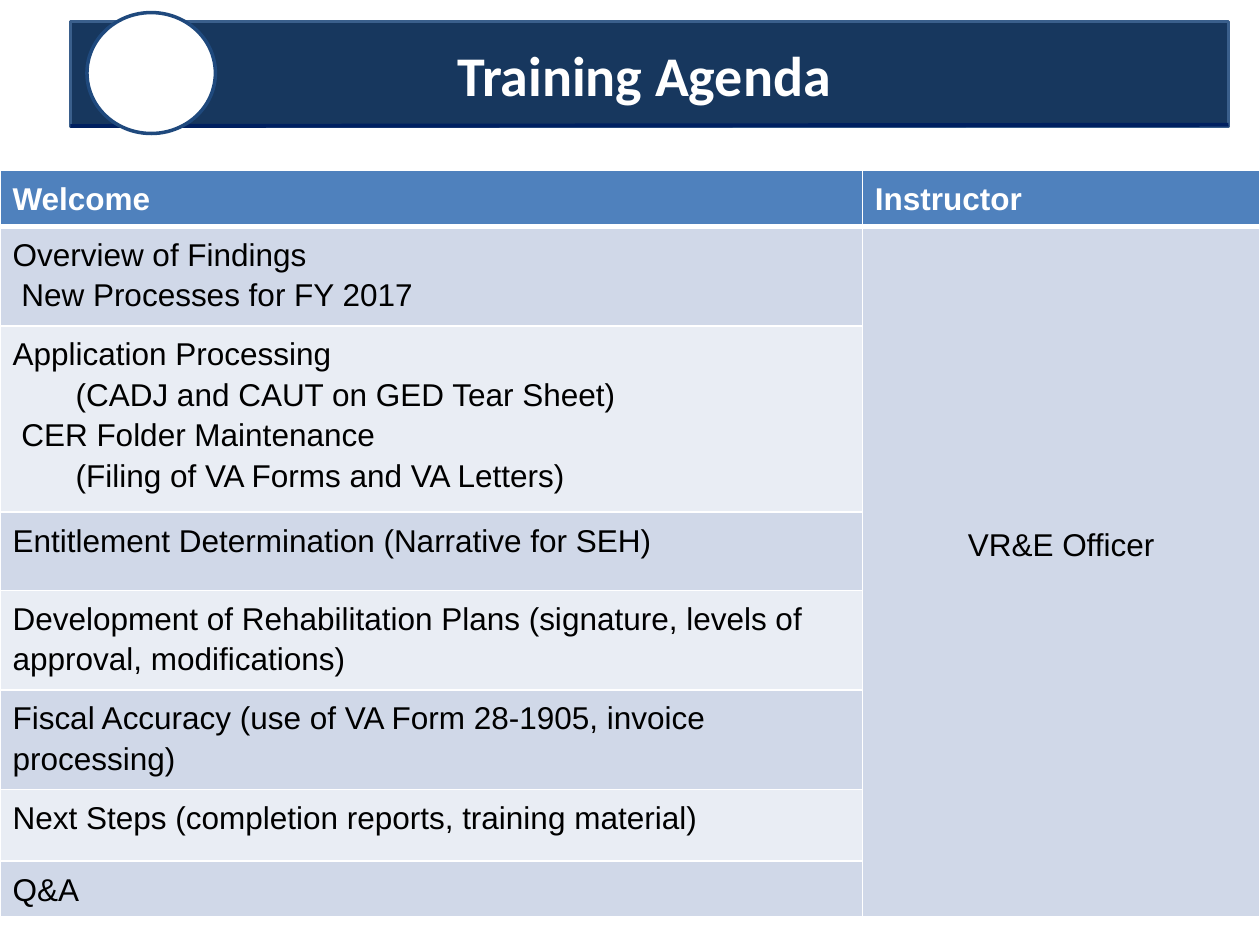
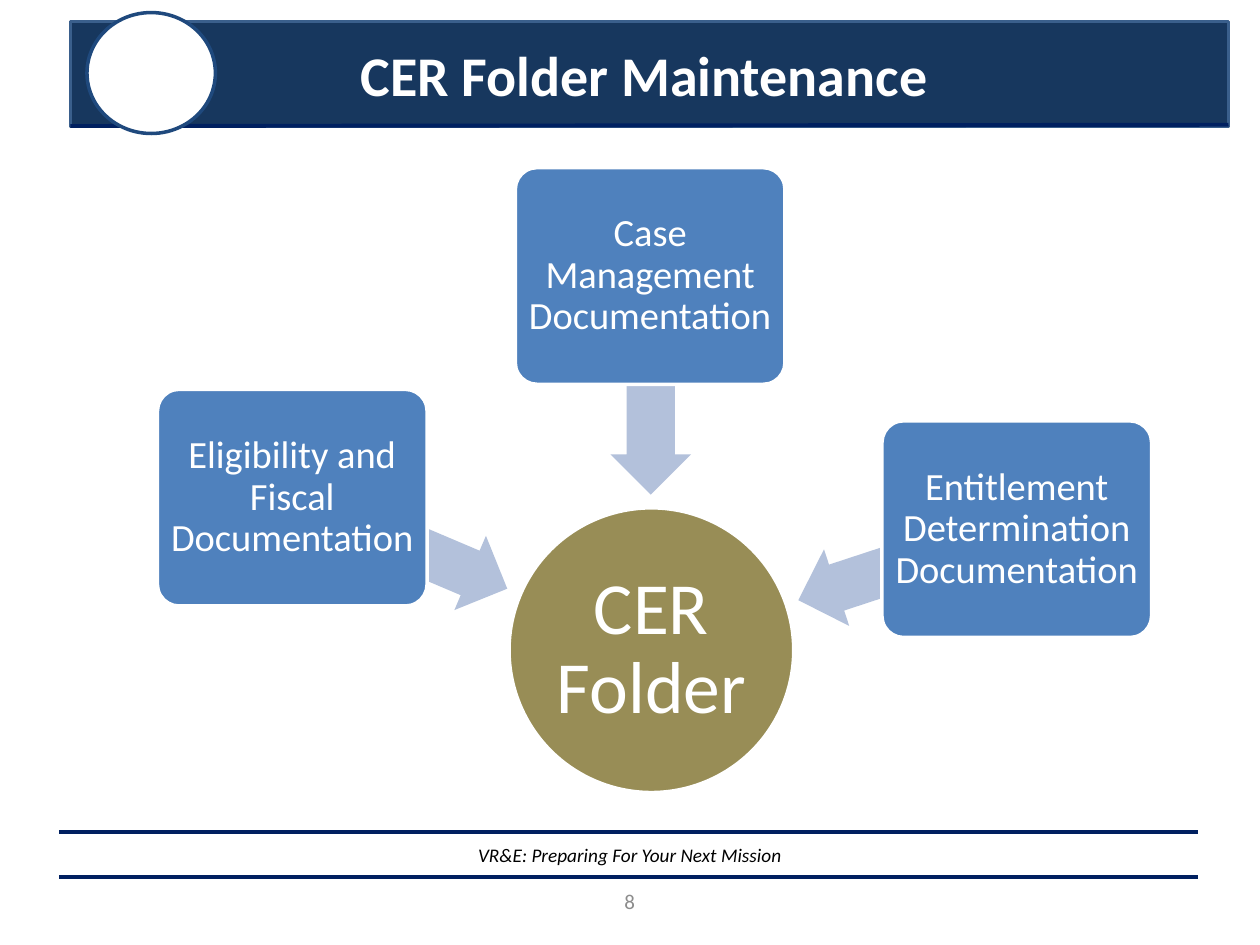
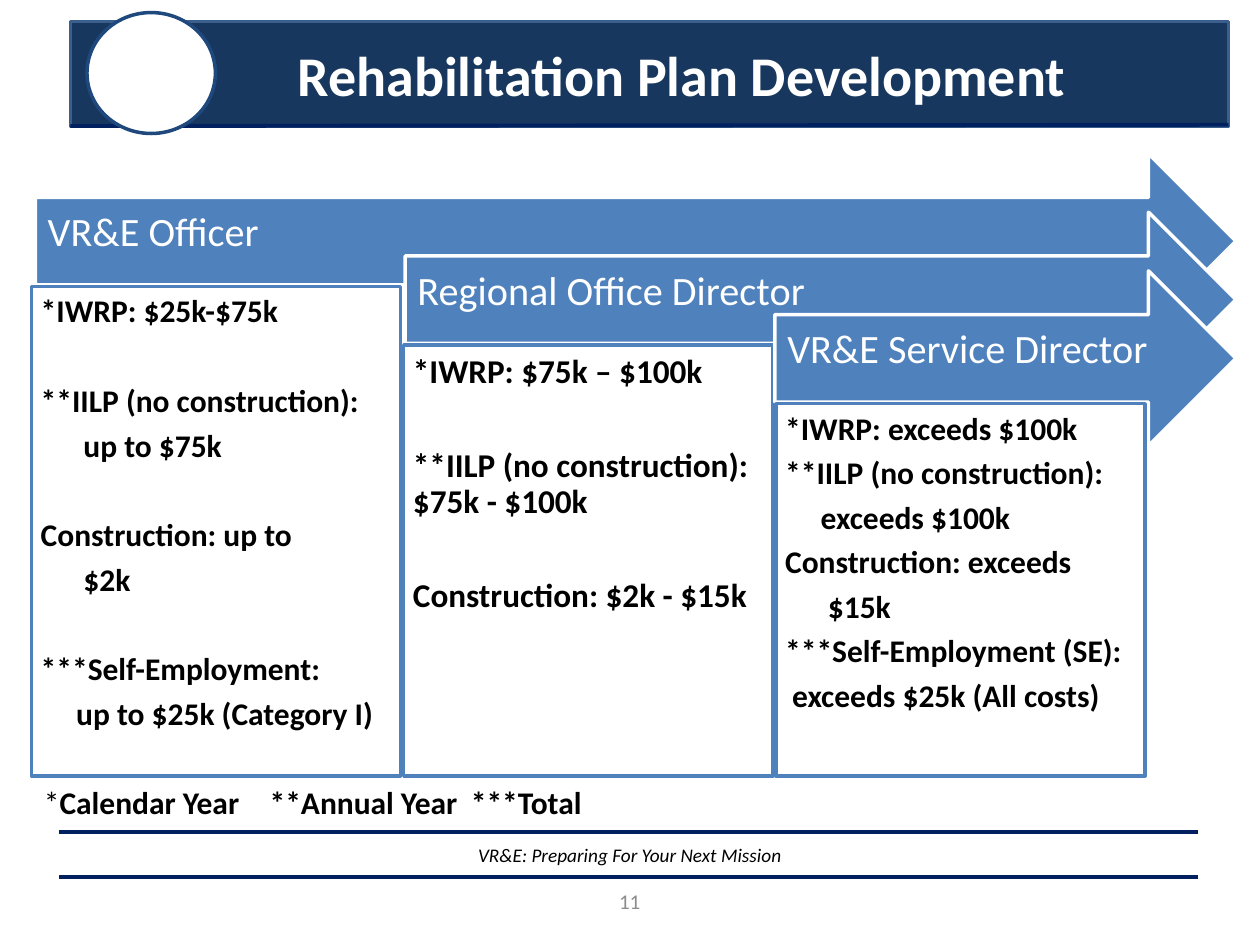
from collections import namedtuple

from lxml.etree import SubElement
from pptx import Presentation
from pptx.dml.color import RGBColor
from pptx.enum.shapes import MSO_CONNECTOR as Connector, MSO_SHAPE as Preset
from pptx.enum.text import MSO_ANCHOR as Anchor, PP_ALIGN as Align
from pptx.oxml.ns import qn
from pptx.util import Pt

Box = namedtuple("Box", "left top width height")
Line = namedtuple("Line", "text indent gap", defaults=(0, 0))

WHITE, BLACK, GREY = "FFFFFF", "000000", "8C8C8C"
BAND, BAND_EDGE, RULE, RING = "17375E", "3A5F8C", "002060", "1F497D"
BLUE, PALE_ARROW, OLIVE = "4F81BD", "B3C1DB", "988D56"
ROW_FILLS = ("D0D8E8", "E9EDF4")
TEXT_INSETS = (7.2, 3.6, 7.2, 3.6)

HEADER_BOX = Box(40.3, 12.2, 661.7, 59.8)
FOOTER_BOX = Box(33.8, 475.2, 650.9, 25.9)
AGENDA_BOX = Box(0, 97.2, 720, 414)
DIAGRAM_BOX = Box(90, 95.8, 568.1, 357.1)
LEVELS_BOX = Box(18, 87.8, 688.3, 355.6)
LEGEND_BOX = Box(18, 444.2, 352.8, 28.8)

AGENDA = [
    (55.4, [Line("Overview of Findings"), Line("New Processes for FY 2017", 5)]),
    (103, [Line("Application Processing"),
           Line("(CADJ and CAUT on GED Tear Sheet)", 36),
           Line("CER Folder Maintenance", 5),
           Line("(Filing of VA Forms and VA Letters)", 36)]),
    (44.6, [Line("Entitlement Determination (Narrative for SEH)")]),
    (55.4, [Line("Development of Rehabilitation Plans (signature, levels of approval, modifications)")]),
    (55.4, [Line("Fiscal Accuracy (use of VA Form 28-1905, invoice processing)")]),
    (41, [Line("Next Steps (completion reports, training material)")]),
    (29.8, [Line("Q&A")]),
]

DOCUMENTS = [
    ("Eligibility and Fiscal Documentation", (0, 126.7), (72, 191.5, 133.2), 203),
    ("Case Management Documentation", (204.5, 0), (219.6, 101.5, 124.6), 270),
    ("Entitlement Determination Documentation", (414, 144.7), (362.9, 203.7, 131), 341.8),
]

LEVELS = [
    ("VR&E Officer", 18, [
        Line("*IWRP: $25k-$75k", 0, 31.7),
        Line("**IILP (no construction):", 0, 6),
        Line("up to $75k", 24.4, 31.7),
        Line("Construction: up to", 0, 6),
        Line("$2k", 24.4, 31.7),
        Line("***Self-Employment:", 0, 6),
        Line("up to $25k (Category I)", 20.3)]),
    ("Regional Office Director", 19, [
        Line("*IWRP: $75k – $100k", 0, 33.4),
        Line("**IILP (no construction): $75k - $100k", 0, 33.4),
        Line("Construction: $2k - $15k")]),
    ("VR&E Service Director", 18, [
        Line("*IWRP: exceeds $100k", 0, 6),
        Line("**IILP (no construction):", 0, 6),
        Line("exceeds $100k", 20.3, 6),
        Line("Construction: exceeds", 0, 6),
        Line("$15k", 24.4, 6),
        Line("***Self-Employment (SE):", 0, 6),
        Line("exceeds $25k (All costs)", 4)]),
]


def color(value):
    return RGBColor.from_string(value)


def write(frame, lines, size, ink, font="Calibri", bold=False, italic=False,
          align=Align.LEFT, anchor=Anchor.TOP, insets=TEXT_INSETS, spacing=1):
    frame.word_wrap = True
    frame.vertical_anchor = anchor
    frame.margin_left, frame.margin_top, frame.margin_right, frame.margin_bottom = map(Pt, insets)
    write_lines(frame, lines, size, ink, font, bold, italic, align, spacing)


def write_lines(frame, lines, size, ink, font, bold, italic, align, spacing):
    frame.text = "\n".join(line.text for line in lines)
    for paragraph, line in zip(frame.paragraphs, lines):
        paragraph.alignment = align
        paragraph.line_spacing = spacing
        paragraph.space_after = Pt(line.gap)
        if line.indent:
            paragraph._p.get_or_add_pPr().set("marL", str(Pt(line.indent)))
        for run in paragraph.runs:
            style_run(run, size, ink, font, bold, italic)


def style_run(run, size, ink, font="Calibri", bold=False, italic=False):
    run.font.name, run.font.size = font, Pt(size)
    run.font.bold, run.font.italic = bold, italic
    run.font.color.rgb = color(ink)


def add_text(slide, box, text, size, ink, **style):
    shape = slide.shapes.add_textbox(*map(Pt, box))
    write(shape.text_frame, [Line(text)], size, ink, **style)


def add_shape(slide, preset, box, fill, edge=None, adjustments=()):
    shape = slide.shapes.add_shape(preset, *map(Pt, box))
    shape.shadow.inherit = False
    shape.fill.solid()
    shape.fill.fore_color.rgb = color(fill)
    if edge:
        shape.line.color.rgb = color(edge)
        shape.line.width = Pt(2)
    else:
        shape.line.fill.background()
    for index, value in enumerate(adjustments):
        shape.adjustments[index] = value
    return shape


def add_rule(slide, left, top, right, bottom):
    rule = slide.shapes.add_connector(Connector.STRAIGHT, *map(Pt, (left, top, right, bottom)))
    rule.line.color.rgb = color(RULE)
    rule.line.width = Pt(2.25)
    SubElement(rule._element.spPr, qn("a:effectLst"))


def add_header(slide, box, title, left_inset):
    right, bottom = box.left + box.width, box.top + box.height
    add_shape(slide, Preset.RECTANGLE, box, BAND, BAND_EDGE)
    add_rule(slide, box.left, bottom, right, bottom - 0.7)
    add_shape(slide, Preset.OVAL, (box.left + 9.4, box.top - 5, 73.4, 69.1), WHITE, RING)
    add_text(slide, (box.left + 1.4, box.top, box.width - 1.4, box.height), title, 32, WHITE,
             bold=True, align=Align.CENTER, anchor=Anchor.MIDDLE, insets=(left_inset, 3.6, 14.4, 3.6))


def add_footer(slide, box, number, motto):
    for top in (box.top, box.top + box.height):
        add_rule(slide, box.left, top, box.left + box.width, top)
    centered = dict(align=Align.CENTER, anchor=Anchor.MIDDLE)
    if motto:
        add_text(slide, (box.left + 2.2, box.top - 1.4, 648, 28.8), motto, 11, BLACK,
                 italic=True, **centered)
    add_text(slide, (box.left + 242, box.top + 25.2, 168, 28.8), number, 12, GREY, **centered)


def add_page(presentation, title, number, motto="VR&E: Preparing For Your Next Mission", left_inset=7.2):
    slide = presentation.slides.add_slide(presentation.slide_layouts[6])
    add_header(slide, HEADER_BOX, title, left_inset)
    add_footer(slide, FOOTER_BOX, number, motto)
    return slide


def add_borders(cell, bottom_width):
    properties = cell._tc.get_or_add_tcPr()
    for side, width in (("lnL", 1), ("lnR", 1), ("lnT", 1), ("lnB", bottom_width)):
        border = SubElement(properties, qn(f"a:{side}"), w=str(Pt(width)))
        fill = SubElement(border, qn("a:solidFill"))
        SubElement(fill, qn("a:srgbClr"), val=WHITE)


def fill_cell(cell, lines, fill, ink=BLACK, bold=False, align=Align.LEFT, bottom_width=1):
    add_borders(cell, bottom_width)
    cell.fill.solid()
    cell.fill.fore_color.rgb = color(fill)
    cell.margin_left = cell.margin_right = Pt(7.2)
    cell.margin_top = cell.margin_bottom = Pt(3.6)
    write_lines(cell.text_frame, lines, 18, ink, "Arial", bold, False, align, 1.15)


def add_agenda(slide, box):
    table = slide.shapes.add_table(len(AGENDA) + 1, 2, *map(Pt, box)).table
    table.first_row = table.horz_banding = False
    table.columns[0].width, table.columns[1].width = Pt(492.8), Pt(box.width - 492.8)
    table.rows[0].height = Pt(29.8)
    for column, heading in enumerate(("Welcome", "Instructor")):
        fill_cell(table.cell(0, column), [Line(heading)], BLUE, WHITE, bold=True, bottom_width=3)
    for row, (height, lines) in enumerate(AGENDA, 1):
        table.rows[row].height = Pt(height)
        fill_cell(table.cell(row, 0), lines, ROW_FILLS[(row - 1) % 2])
    instructor = table.cell(1, 1)
    instructor.merge(table.cell(len(AGENDA), 1))
    fill_cell(instructor, [Line("VR&E Officer")], ROW_FILLS[0], align=Align.CENTER)
    instructor.vertical_anchor = Anchor.MIDDLE
    instructor.margin_bottom = Pt(36.7)


def add_folder_diagram(slide, box):
    style = dict(align=Align.CENTER, anchor=Anchor.MIDDLE, spacing=0.9)
    folder = add_shape(slide, Preset.OVAL, (box.left + 200.9, box.top + 194.4, 162.7, 162.7), OLIVE, WHITE)
    write(folder.text_frame, [Line("CER Folder")], 42, WHITE, insets=(2.2,) * 4, **style)
    for text, (left, top), (arrow_left, arrow_top, length), angle in DOCUMENTS:
        arrow = add_shape(slide, Preset.LEFT_ARROW,
                          (box.left + arrow_left, box.top + arrow_top, length, 46.1),
                          PALE_ARROW, adjustments=(0.6, 0.5))
        arrow.rotation = angle
        document = add_shape(slide, Preset.ROUNDED_RECTANGLE,
                             (box.left + left, box.top + top, 154.1, 123.8),
                             BLUE, WHITE, adjustments=(0.1,))
        write(document.text_frame, [Line(text)], 22, WHITE, insets=(3.6,) * 4, **style)


def add_approval_levels(slide, box):
    right, bottom = box.left + box.width, box.top + box.height
    for index, (name, size, lines) in enumerate(LEVELS):
        top = box.top + 33.5 * index
        left = box.left + 2.2 + 211.3 * index
        arrow = add_shape(slide, Preset.RIGHT_ARROW, (left, top, right - left, 100), BLUE, WHITE,
                          adjustments=(0.5, 0.5))
        write(arrow.text_frame, [Line(name)], 23, WHITE, anchor=Anchor.MIDDLE,
              insets=(7.2, 7.2, 20.2, 15.8), spacing=0.9)
        limits_top = top + 75.9
        limits = add_shape(slide, Preset.RECTANGLE,
                           (box.left + 212.7 * index, limits_top, 211, bottom - limits_top), WHITE, BLUE)
        write(limits.text_frame, lines, size, BLACK, bold=True, insets=(5.3,) * 4, spacing=0.9)


def add_legend(slide, box):
    frame = slide.shapes.add_textbox(*map(Pt, box)).text_frame
    frame.word_wrap = True
    paragraph = frame.paragraphs[0]
    tabs = SubElement(paragraph._p.get_or_add_pPr(), qn("a:tabLst"))
    for position in (129, 244):
        SubElement(tabs, qn("a:tab"), pos=str(Pt(position)), algn="l")
    for text, bold in (("*", False), ("Calendar Year\t**Annual Year\t***Total", True)):
        run = paragraph.add_run()
        run.text = text
        style_run(run, 18, BLACK, bold=bold)


def main():
    presentation = Presentation()
    presentation.slide_width, presentation.slide_height = Pt(720), Pt(540)
    add_agenda(add_page(presentation, "Training Agenda", "2", motto=None), AGENDA_BOX)
    add_folder_diagram(add_page(presentation, "CER Folder Maintenance", "8"), DIAGRAM_BOX)
    plan = add_page(presentation, "Rehabilitation Plan Development", "11", left_inset=50)
    add_approval_levels(plan, LEVELS_BOX)
    add_legend(plan, LEGEND_BOX)
    presentation.save("out.pptx")


if __name__ == "__main__":
    main()
